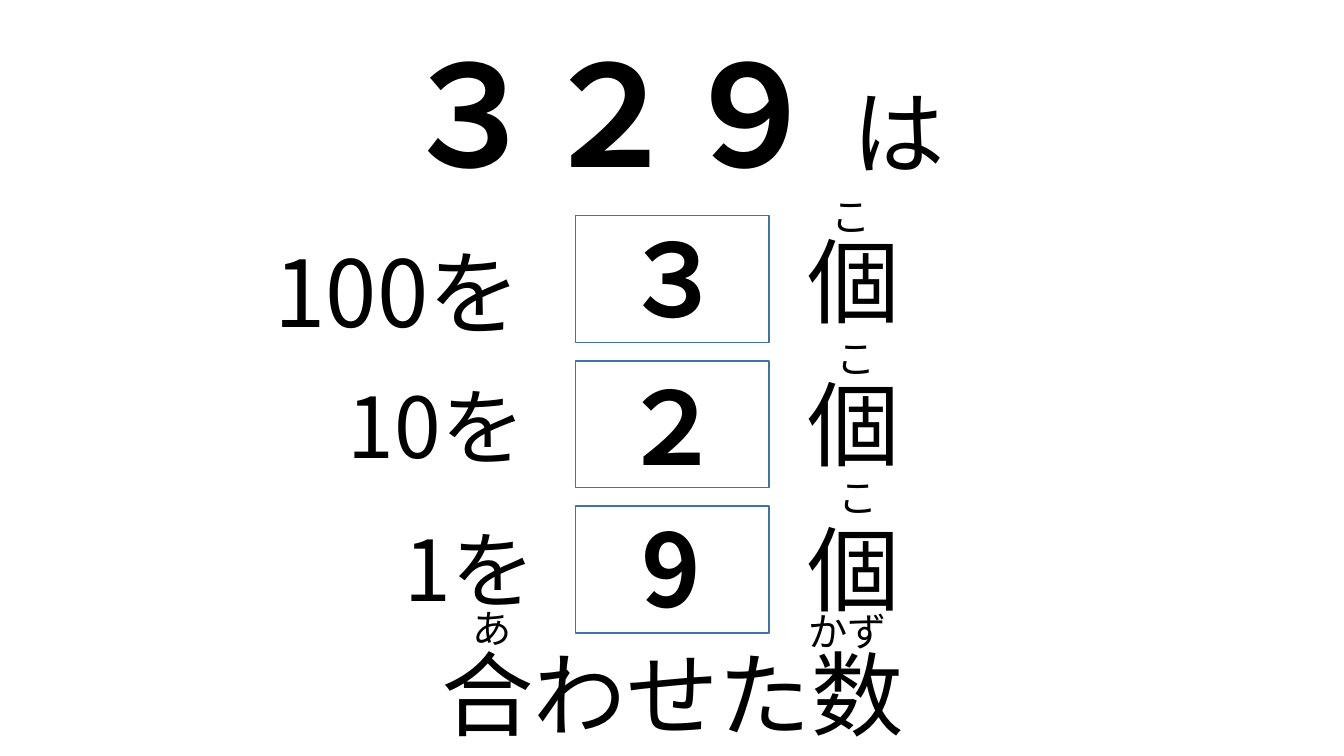
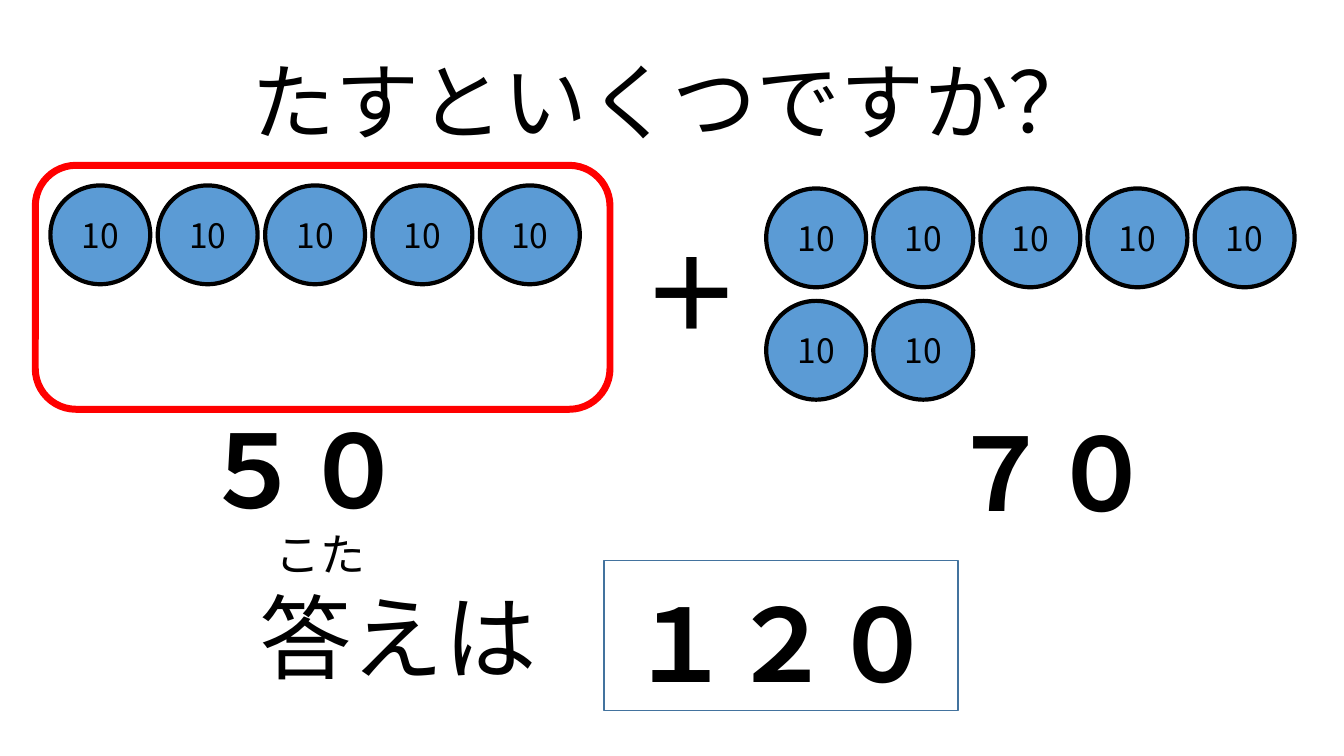
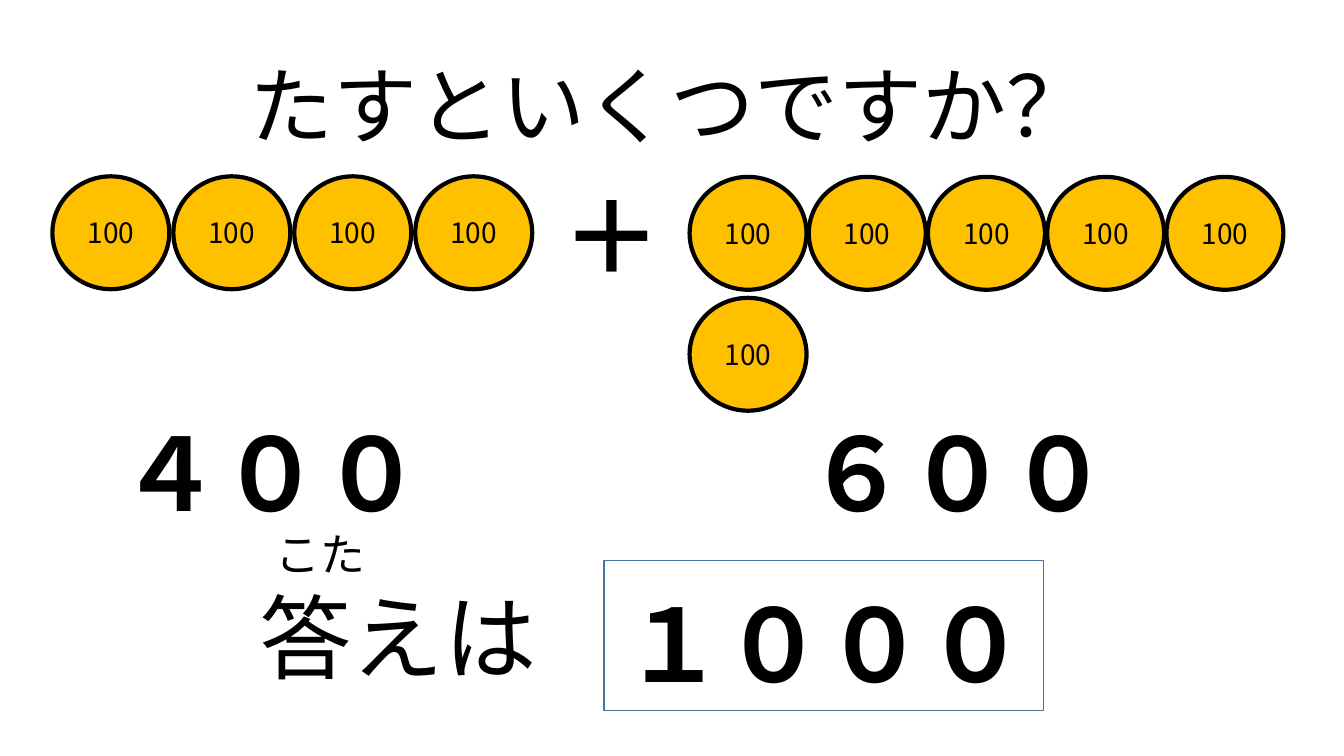
import dataclasses

import lxml.etree
import pptx
import pptx.dml.color
import pptx.enum.shapes
import pptx.enum.text
import pptx.oxml.ns
import pptx.util

SHAPE = pptx.enum.shapes.MSO_SHAPE
ANCHOR = pptx.enum.text.MSO_ANCHOR
ALIGN = pptx.enum.text.PP_ALIGN
AUTO = pptx.enum.text.MSO_AUTO_SIZE

WIDTH, HEIGHT = pptx.util.Inches(13.33), pptx.util.Inches(7.5)
FONT = "Noto Sans CJK JP"
COLORS = {
    "text": "000000",
    "box": "43739E",
    "ten": "5B9BD5",
    "hundred": "FFC000",
    "frame": "FF0000",
}


@dataclasses.dataclass(frozen=True)
class Box:
    """Shares of the slide's width and height, in percent."""

    left: float
    top: float
    width: float
    height: float

    def emu(self) -> tuple[int, int, int, int]:
        return (
            round(self.left * WIDTH / 100),
            round(self.top * HEIGHT / 100),
            round(self.width * WIDTH / 100),
            round(self.height * HEIGHT / 100),
        )


@dataclasses.dataclass(frozen=True)
class Run:
    text: str
    size: int
    bold: bool = False


@dataclasses.dataclass(frozen=True)
class Label:
    box: Box
    run: Run
    align: ALIGN = ALIGN.CENTER
    anchor: ANCHOR = ANCHOR.MIDDLE
    spacing: float = 1.0
    auto_size: AUTO = AUTO.NONE


@dataclasses.dataclass(frozen=True)
class PlaceRow:
    unit: Label
    digit: Label
    counter_top: float
    ruby_left: float
    ruby_top: float


@dataclasses.dataclass(frozen=True)
class CoinStyle:
    text: str
    size: int
    color: str
    width: float
    height: float
    row_step: float


@dataclasses.dataclass(frozen=True)
class CoinGroup:
    left: float
    top: float
    step: float
    count: int


@dataclasses.dataclass(frozen=True)
class Addition:
    title: Box
    style: CoinStyle
    groups: tuple[CoinGroup, ...]
    terms: tuple[Label, ...]
    plus_left: float
    plus_top: float
    answer: str
    answer_width: float
    frame: Box | None = None


def rgb(name: str) -> pptx.dml.color.RGBColor:
    return pptx.dml.color.RGBColor.from_string(COLORS[name])


def write(sp, runs: list[Run], align=ALIGN.CENTER, anchor=ANCHOR.MIDDLE,
          spacing: float = 1.0, auto_size=AUTO.NONE) -> None:
    tf = sp.text_frame
    tf.word_wrap = True
    tf.auto_size = auto_size
    tf.vertical_anchor = anchor
    p = tf.paragraphs[0]
    p.alignment = align
    p.line_spacing = spacing
    for run in runs:
        r = p.add_run()
        r.text = run.text
        r.font.size = pptx.util.Pt(run.size)
        r.font.bold = run.bold
        r.font.color.rgb = rgb("text")
        r.font.name = FONT
        ea = lxml.etree.SubElement(r.font._element, pptx.oxml.ns.qn("a:ea"))
        ea.set("typeface", FONT)


def add_label(s, label: Label) -> None:
    sp = s.shapes.add_textbox(*label.box.emu())
    write(sp, [label.run], label.align, label.anchor, label.spacing, label.auto_size)


def add_outline(shapes, kind: SHAPE, box: Box, color: str, width: int, fill: str | None = None):
    sp = shapes.add_shape(kind, *box.emu())
    sp.shadow.inherit = False
    if fill:
        sp.fill.solid()
        sp.fill.fore_color.rgb = rgb(fill)
    else:
        sp.fill.background()
    sp.line.color.rgb = rgb(color)
    sp.line.width = pptx.util.Pt(width)
    return sp


def add_slide(prs, box: Box, runs: list[Run]):
    s = prs.slides.add_slide(prs.slide_layouts.get_by_name("Title Only"))
    title = s.shapes.title
    title.left, title.top, title.width, title.height = box.emu()
    write(title, runs, anchor=ANCHOR.BOTTOM, spacing=0.9)
    return s


def ruby(text: str, left: float, top: float, width: float = 5.7) -> Label:
    return Label(Box(left, top, width, 7.6), Run(text, 28), ALIGN.LEFT, ANCHOR.TOP,
                 auto_size=AUTO.SHAPE_TO_FIT_TEXT)


def digit(text: str, left: float, top: float) -> Label:
    return Label(Box(left, top, 14.4, 16.8), Run(text, 72, True))


def term(text: str, left: float, top: float) -> Label:
    return Label(Box(left, top, 26.26, 19.87), Run(text, 72, True))


PLACE_ROWS = (
    PlaceRow(Label(Box(17.18, 30, 24.83, 16.93), Run("100を", 66)),
             digit("３", 42.91, 28.27), 28.53, 61.14, 24.8),
    PlaceRow(Label(Box(24.23, 47.87, 16.5, 16.67), Run("10を", 60)),
             digit("２", 42.83, 47.87), 47.47, 61.52, 43.6),
    PlaceRow(Label(Box(24.08, 66.8, 16.5, 16.67), Run("1を", 60), ALIGN.RIGHT),
             digit("9", 42.76, 66.67), 66.67, 61.67, 62),
)

ADDITIONS = (
    Addition(
        title=Box(0, 3.87, 100, 16.8),
        style=CoinStyle("10", 24, "ten", 7.43, 13.07, 14.87),
        groups=(CoinGroup(3.75, 24.53, 7.99, 5), CoinGroup(57.01, 24.93, 7.97, 7)),
        terms=(term("５０", 9.45, 52), term("７０", 65.12, 52.4)),
        plus_left=46.14, plus_top=31.2,
        answer="１２０", answer_width=26.33,
        frame=Box(2.63, 21.87, 42.76, 32.27),
    ),
    Addition(
        title=Box(-0.15, 4.4, 100, 16.8),
        style=CoinStyle("100", 20, "hundred", 8.7, 14.93, 16),
        groups=(CoinGroup(3.9, 23.33, 9, 4), CoinGroup(51.31, 23.4, 8.87, 6)),
        terms=(term("４００", 7.05, 52.4), term("６００", 58.14, 52.4)),
        plus_left=40.14, plus_top=23.73,
        answer="１０００", answer_width=32.71,
    ),
)


def add_place_values(prs) -> None:
    s = add_slide(prs, Box(20.63, 4.27, 58.81, 22.53),
                  [Run("３２９ ", 100, True), Run("は", 66)])
    for i, row in enumerate(PLACE_ROWS):
        add_outline(s.shapes, SHAPE.RECTANGLE, Box(42.83, 28.53 + 19.2 * i, 14.4, 16.8), "box", 1)
        add_label(s, row.unit)
        add_label(s, row.digit)
        add_label(s, Label(Box(57.99, row.counter_top, 11.03, 16.8), Run("個", 66)))
        add_label(s, ruby("こ", row.ruby_left, row.ruby_top))
    add_label(s, Label(Box(28.43, 83.2, 43.21, 16.8), Run("合わせた数", 66)))
    add_label(s, ruby("あ", 34.43, 79.33))
    add_label(s, ruby("かず", 59.41, 79.73, 9.23))


def add_coins(s, style: CoinStyle, group: CoinGroup) -> None:
    shapes = s.shapes.add_group_shape().shapes
    for i in range(group.count):
        row, column = divmod(i, 5)
        box = Box(group.left + column * group.step, group.top + row * style.row_step,
                  style.width, style.height)
        sp = add_outline(shapes, SHAPE.OVAL, box, "text", 3, style.color)
        write(sp, [Run(style.text, style.size)])


def add_addition(prs, addition: Addition) -> None:
    s = add_slide(prs, addition.title, [Run("たすといくつですか？", 60)])
    add_label(s, Label(Box(0, 74.13, 59.26, 19.87), Run("答えは", 66)))
    add_outline(s.shapes, SHAPE.RECTANGLE,
                Box(44.94, 74.13, addition.answer_width, 19.87), "box", 1)
    for label in addition.terms:
        add_label(s, label)
    add_label(s, Label(Box(45.01, 75.07, addition.answer_width, 19.87),
                       Run(addition.answer, 72, True)))
    for group in addition.groups:
        add_coins(s, addition.style, group)
    if addition.frame:
        add_outline(s.shapes, SHAPE.ROUNDED_RECTANGLE, addition.frame, "frame", 5)
    add_label(s, Label(Box(addition.plus_left, addition.plus_top, 10.73, 14.53),
                       Run("＋", 72, True)))
    add_label(s, Label(Box(19.13, 67.07, 9.45, 10.4), Run("こた", 32),
                       anchor=ANCHOR.BOTTOM, spacing=0.9))


def main() -> None:
    prs = pptx.Presentation()
    prs.slide_width, prs.slide_height = WIDTH, HEIGHT
    add_place_values(prs)
    for addition in ADDITIONS:
        add_addition(prs, addition)
    prs.save("out.pptx")


if __name__ == "__main__":
    main()
